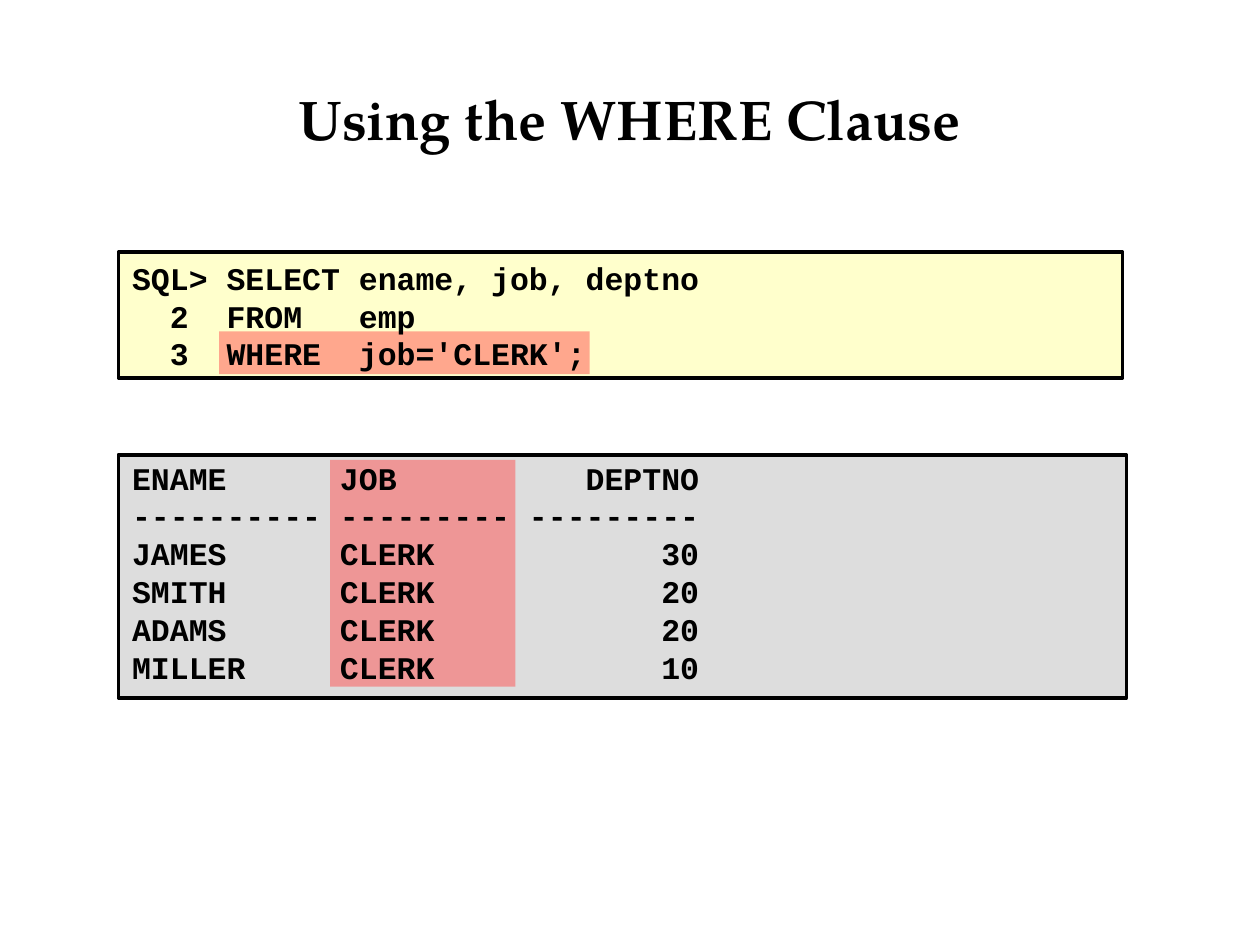
from dataclasses import dataclass

from lxml.etree import SubElement
from pptx import Presentation
from pptx.dml.color import RGBColor
from pptx.enum.text import MSO_ANCHOR, PP_ALIGN
from pptx.enum.shapes import MSO_SHAPE
from pptx.oxml.ns import qn
from pptx.util import Inches, Pt


@dataclass(frozen=True)
class Theme:
    ink: str = "000000"
    query: str = "FFFFCC"
    result: str = "DDDDDD"
    highlight: str = "FF5050"
    title_font: str = "TeX Gyre Pagella"
    code_font: str = "Courier New"
    title_size: int = 32
    code_size: int = 18
    border: int = 2


@dataclass(frozen=True)
class Box:
    left: float
    top: float
    width: float
    height: float

    def lengths(self) -> tuple:
        return tuple(Inches(v) for v in (self.left, self.top, self.width, self.height))


@dataclass(frozen=True)
class Panel:
    frame: Box
    fill: str
    highlight: Box
    text_box: Box
    anchor: MSO_ANCHOR
    code: str


THEME = Theme()
TITLE_BOX = Box(1.01, 0.62, 7.98, 0.96)

QUERY = """\
SQL> SELECT ename, job, deptno
  2  FROM   emp
  3  WHERE  job='CLERK';"""

RESULT = """\
ENAME      JOB          DEPTNO
---------- --------- ---------
JAMES      CLERK            30
SMITH      CLERK            20
ADAMS      CLERK            20
MILLER     CLERK            10"""

PANELS = [
    Panel(Box(0.94, 2, 7.97, 1), THEME.query, Box(1.74, 2.63, 2.94, 0.34),
          Box(0.95, 1.99, 8, 1.03), MSO_ANCHOR.MIDDLE, QUERY),
    Panel(Box(0.94, 3.61, 8, 1.93), THEME.result, Box(2.62, 3.65, 1.47, 1.8),
          Box(0.95, 3.59, 8.03, 1.9), MSO_ANCHOR.TOP, RESULT),
]


def set_font(r, name: str, size: int) -> None:
    formats = {"name": name, "size": Pt(size), "bold": True}
    for key, value in formats.items():
        setattr(r.font, key, value)
    r.font.color.rgb = RGBColor.from_string(THEME.ink)


def add_title(s, text: str) -> None:
    sp = s.shapes.title
    for key, value in zip(("left", "top", "width", "height"), TITLE_BOX.lengths()):
        setattr(sp, key, value)
    tf = sp.text_frame
    tf.vertical_anchor = MSO_ANCHOR.TOP
    p = tf.paragraphs[0]
    p.alignment = PP_ALIGN.CENTER
    r = p.add_run()
    r.text = text
    set_font(r, THEME.title_font, THEME.title_size)


def add_rect(s, box: Box, color: str):
    sp = s.shapes.add_shape(MSO_SHAPE.RECTANGLE, *box.lengths())
    sp.shadow.inherit = False
    sp.fill.solid()
    sp.fill.fore_color.rgb = RGBColor.from_string(color)
    return sp


def add_frame(s, panel: Panel) -> None:
    sp = add_rect(s, panel.frame, panel.fill)
    sp.line.color.rgb = RGBColor.from_string(THEME.ink)
    sp.line.width = Pt(THEME.border)


def add_highlight(s, box: Box) -> None:
    """Draw a borderless, half-transparent marker."""
    sp = add_rect(s, box, THEME.highlight)
    sp.line.fill.background()
    color = sp.fill._xPr.find(qn("a:solidFill"))[0]
    SubElement(color, qn("a:alpha"), val="50000")


def add_code(s, panel: Panel) -> None:
    tf = s.shapes.add_textbox(*panel.text_box.lengths()).text_frame
    tf.word_wrap = True
    tf.vertical_anchor = panel.anchor
    for i, line in enumerate(panel.code.splitlines()):
        p = tf.add_paragraph() if i else tf.paragraphs[0]
        r = p.add_run()
        r.text = line
        set_font(r, THEME.code_font, THEME.code_size)


def main() -> None:
    prs = Presentation()
    prs.slide_width, prs.slide_height = Inches(10), Inches(7.5)
    s = prs.slides.add_slide(prs.slide_layouts[5])
    add_title(s, "Using the WHERE Clause")
    for panel in PANELS:
        add_frame(s, panel)
        add_highlight(s, panel.highlight)
        add_code(s, panel)
    prs.save("out.pptx")


if __name__ == "__main__":
    main()
